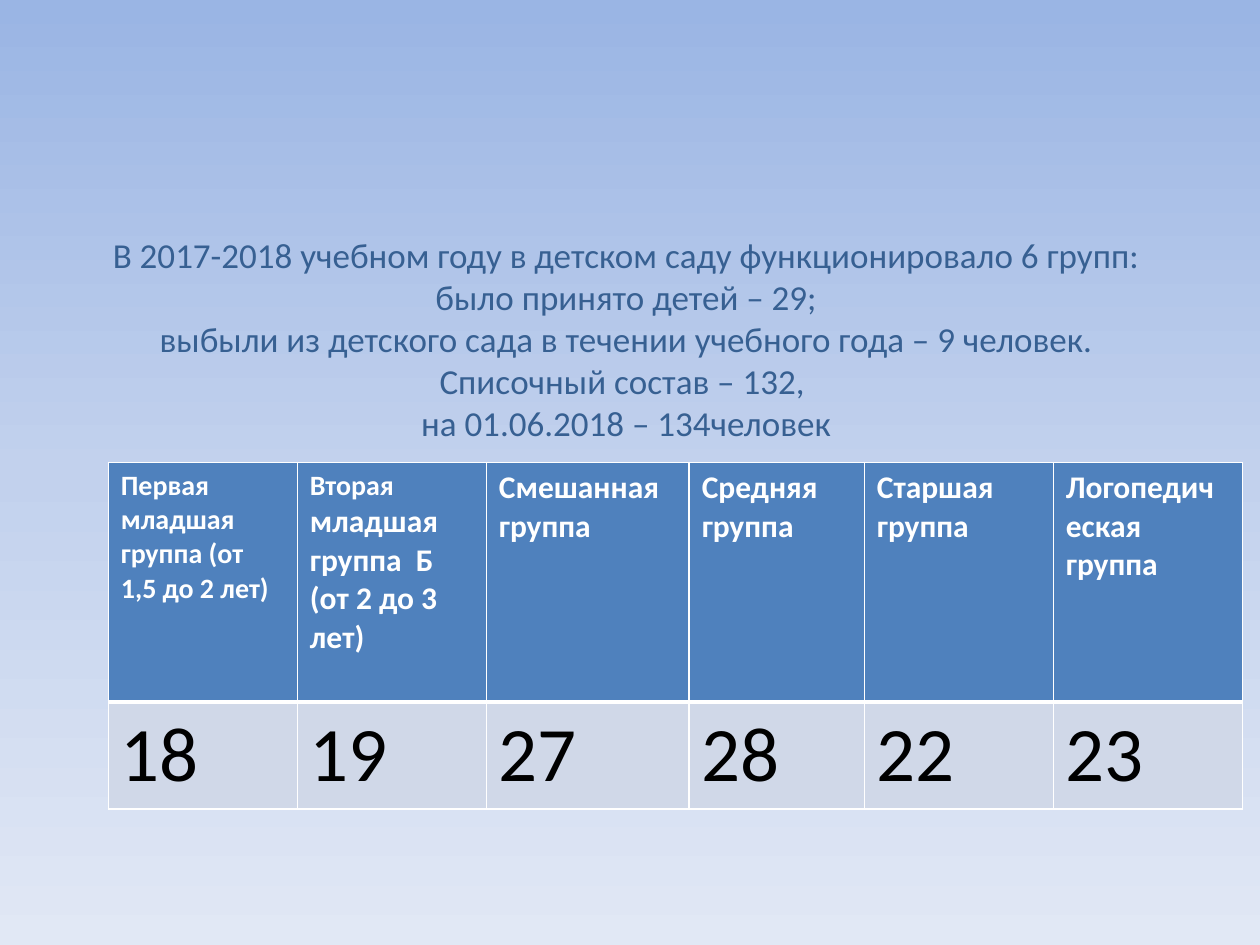
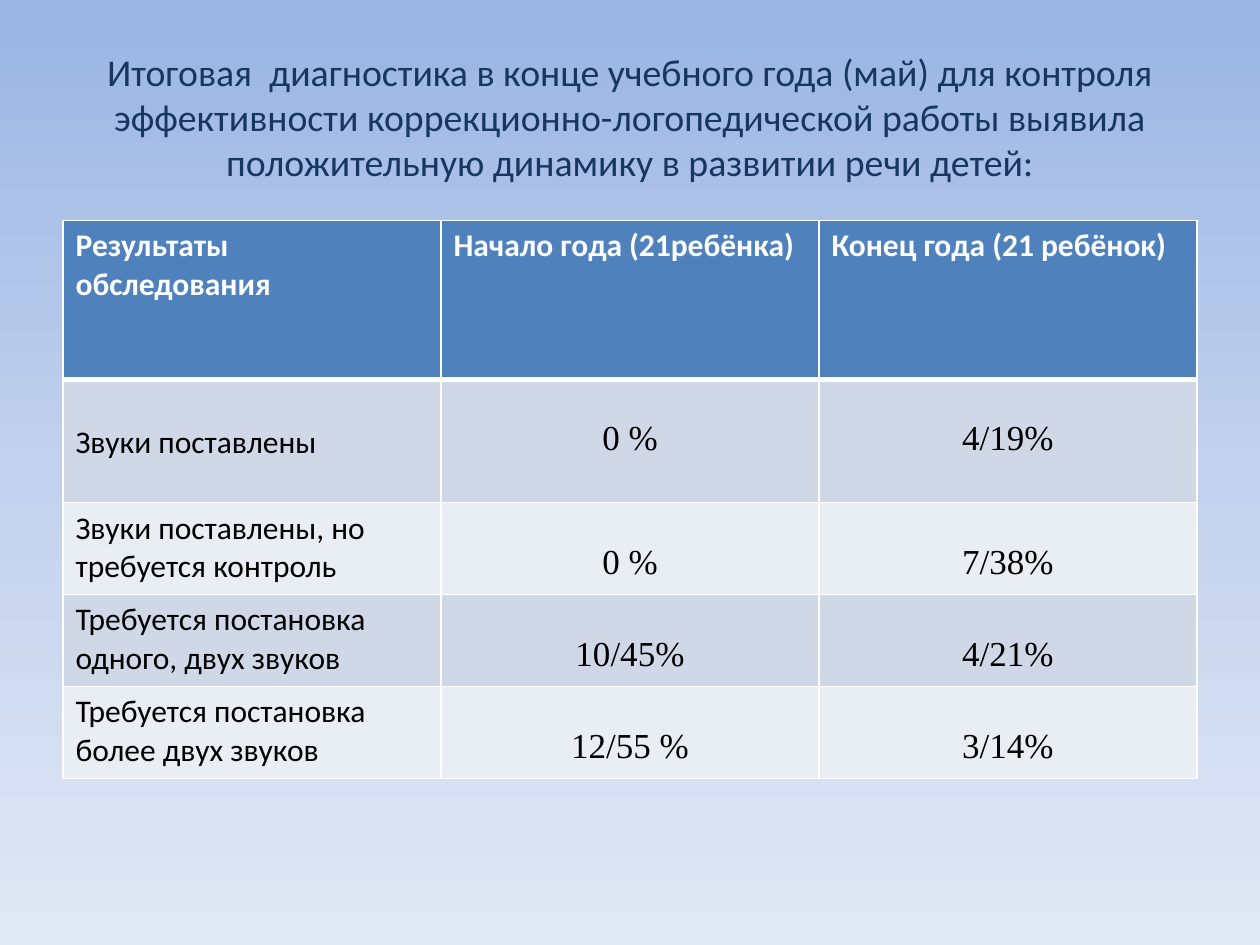
from dataclasses import dataclass

from lxml import etree
from pptx import Presentation
from pptx import util as u
from pptx.dml.color import RGBColor
from pptx.enum import text
from pptx.oxml.ns import qn


@dataclass(frozen=True)
class Theme:
    # Colours
    gradient: tuple = ((0, "9AB5E4"), (50, "C2D1ED"), (100, "E1E8F5"))
    title_blue: str = "376092"
    title_navy: str = "17375E"
    header: str = "4F81BD"
    bands: tuple = ("D0D8E8", "E9EDF4")
    white: str = "FFFFFF"
    black: str = "000000"
    # Fonts and type sizes
    font: str = "Calibri"
    value_font: str = "Times New Roman"
    small: float = 16
    body: float = 18
    value: float = 20
    count: float = 44
    # Border widths
    thin: float = 1
    thick: float = 3


T = Theme()
WIDTH, HEIGHT = 10, 7.5


def paint_background(master):
    """Give every slide the same vertical gradient."""
    fill = master.background.fill
    fill.gradient()
    fill.gradient_angle = 270
    stops = master.element.find(".//" + qn("a:gsLst"))
    for stop in list(stops):
        stops.remove(stop)
    for position, color in T.gradient:
        stop = etree.SubElement(stops, qn("a:gs"), pos=str(position * 1000))
        etree.SubElement(stop, qn("a:srgbClr"), val=color)


def format_run(r, size, color, font=T.font, bold=False):
    r.font.size = u.Pt(size)
    r.font.name = font
    r.font.bold = bold
    r.font.color.rgb = RGBColor.from_string(color)


def add_titled_slide(prs, lines, box, size, color, bottom_inset=0.05):
    s = prs.slides.add_slide(prs.slide_layouts[5])
    sp = s.shapes.title
    sp.left, sp.top, sp.width, sp.height = (u.Inches(v) for v in box)
    tf = sp.text_frame
    tf.text = "\v".join(lines)
    tf.word_wrap = True
    tf.auto_size = text.MSO_AUTO_SIZE.NONE
    tf.vertical_anchor = text.MSO_ANCHOR.MIDDLE
    tf.margin_bottom = u.Inches(bottom_inset)
    p = tf.paragraphs[0]
    p.alignment = text.PP_ALIGN.CENTER
    for r in p.runs:
        format_run(r, size, color)
    return s


def set_borders(cell, top, bottom):
    tc_pr = cell._tc.get_or_add_tcPr()
    widths = {"L": T.thin, "R": T.thin, "T": top, "B": bottom}
    for side, width in widths.items():
        line = etree.SubElement(tc_pr, qn("a:ln" + side), w=str(u.Pt(width)))
        fill = etree.SubElement(line, qn("a:solidFill"))
        etree.SubElement(fill, qn("a:srgbClr"), val=T.white)


def add_table(s, left, top, widths, heights):
    """Add a table with white rules, a dark header and alternating rows."""
    frame = s.shapes.add_table(len(heights), len(widths), u.Inches(left), u.Inches(top),
                               u.Inches(sum(widths)), u.Inches(sum(heights)))
    table = frame.table
    table.first_row = table.horz_banding = False
    for column, width in zip(table.columns, widths):
        column.width = u.Inches(width)
    for i, (row, height) in enumerate(zip(table.rows, heights)):
        row.height = u.Inches(height)
        color = T.bands[(i - 1) % 2] if i else T.header
        for cell in row.cells:
            set_borders(cell, T.thick if i == 1 else T.thin, T.thin if i else T.thick)
            cell.fill.solid()
            cell.fill.fore_color.rgb = RGBColor.from_string(color)
    return table


def write_cell(cell, content, size, color=T.black, **style):
    p = cell.text_frame.paragraphs[0]
    p.text = content
    format_run(p.runs[0], size, color, **style)


def write_header(cell, *parts):
    """Write a bold heading from (wording, size) parts."""
    p = cell.text_frame.paragraphs[0]
    for wording, size in parts:
        r = p.add_run()
        r.text = wording
        format_run(r, size, T.white, bold=True)


def write_value(cell, content):
    """Write a centred result one line below the top of its row."""
    cell.margin_left = cell.margin_right = cell.margin_bottom = 0
    cell.margin_top = u.Inches(0.32)
    write_cell(cell, content, T.value, font=T.value_font)
    cell.text_frame.paragraphs[0].alignment = text.PP_ALIGN.CENTER


def build_groups(prs):
    lines = ("В 2017-2018 учебном году в детском саду функционировало 6 групп:",
             "было принято детей – 29;",
             "выбыли из детского сада в течении учебного года – 9 человек.",
             "Списочный состав – 132, ",
             "на 01.06.2018 – 134человек")
    s = add_titled_slide(prs, lines, (0.47, 1.25, 0.9 * WIDTH, 3.36),
                         T.value, T.title_blue, bottom_inset=0.53)
    groups = (
        ([("Первая младшая группа (от 1,5 до 2 лет)", T.small)], 18),
        ([("Вторая ", T.small), ("младшая группа  Б (от 2 до 3 лет)", T.body)], 19),
        ([("Смешанная группа", T.body)], 27),
        ([("Средняя группа", T.body)], 28),
        ([("Старшая группа", T.body)], 22),
        ([("Логопедическая группа", T.body)], 23),
    )
    table = add_table(s, 0.86, 3.67, (1.5, 1.5, 1.61, 1.39, 1.5, 1.5), (1.9, 0.85))
    for j, (heading, children) in enumerate(groups):
        write_header(table.cell(0, j), *heading)
        write_cell(table.cell(1, j), str(children), T.count)


def build_diagnostics(prs):
    title = ("Итоговая  диагностика в конце учебного года (май) для контроля "
             "эффективности коррекционно-логопедической работы выявила "
             "положительную динамику в развитии речи детей:")
    margin = 0.05 * WIDTH
    s = add_titled_slide(prs, [title], (margin, 0.04 * HEIGHT, 0.9 * WIDTH, 1.25),
                         21.6, T.title_navy)
    headings = ("Результаты обследования", "Начало года (21ребёнка)",
                "Конец года (21 ребёнок)")
    results = (
        ("Звуки поставлены", "0 %", "4/19%"),
        ("Звуки поставлены, но требуется контроль", "0 %", "7/38%"),
        ("Требуется постановка одного, двух звуков", "10/45%", "4/21%"),
        ("Требуется постановка более двух звуков", "12/55 %", "3/14%"),
    )
    table = add_table(s, margin, 1.75, [0.3 * WIDTH] * 3, [1.26, 0.98] + [0.73] * 3)
    for j, heading in enumerate(headings):
        write_header(table.cell(0, j), (heading, T.body))
    for i, (label, *values) in enumerate(results, 1):
        write_cell(table.cell(i, 0), label, T.body)
        for j, value in enumerate(values, 1):
            write_value(table.cell(i, j), value)
    # The first label sits one line lower, level with its results
    table.cell(1, 0).margin_top = u.Inches(0.35)


def main():
    prs = Presentation()
    prs.slide_width, prs.slide_height = u.Inches(WIDTH), u.Inches(HEIGHT)
    paint_background(prs.slide_master)
    build_groups(prs)
    build_diagnostics(prs)
    prs.save("out.pptx")


if __name__ == "__main__":
    main()
